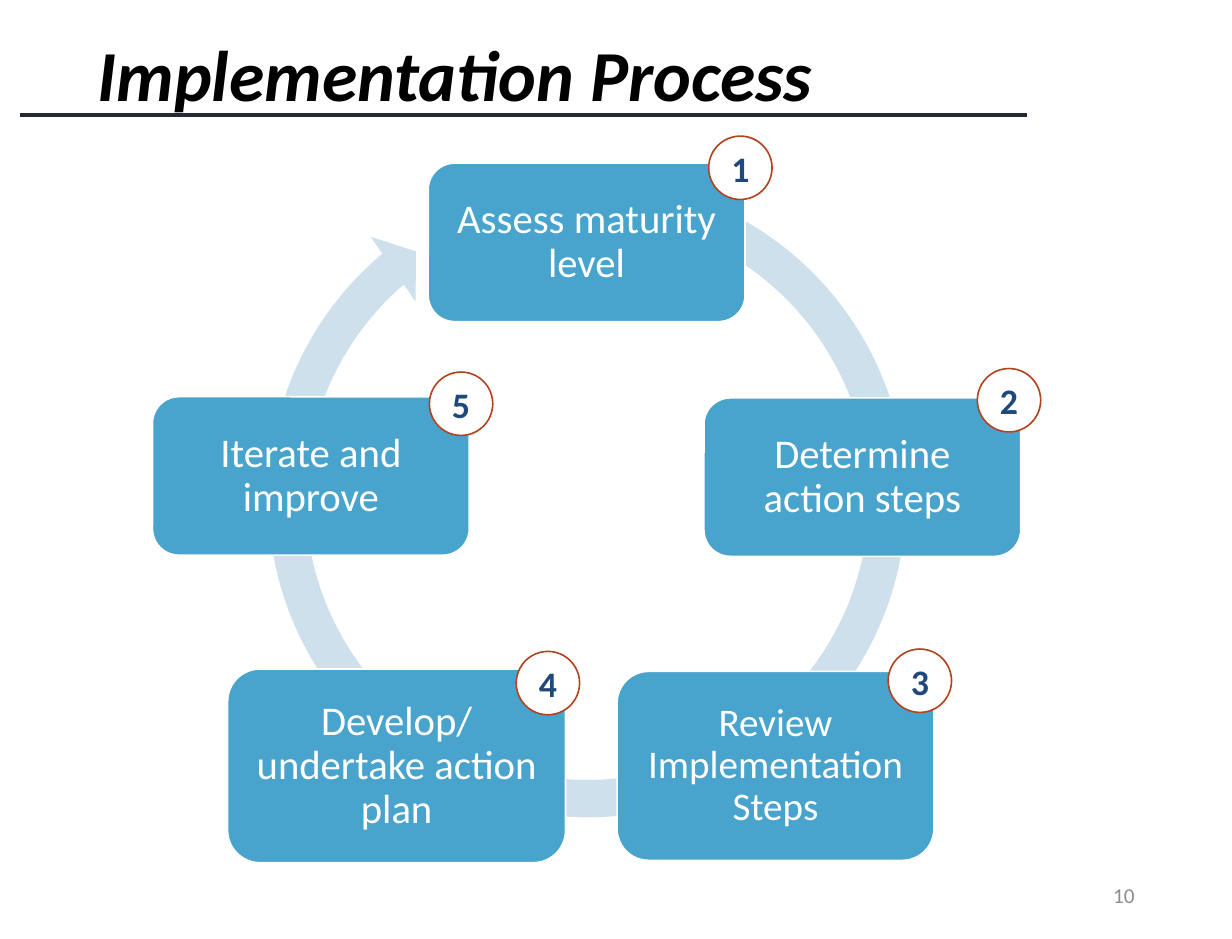
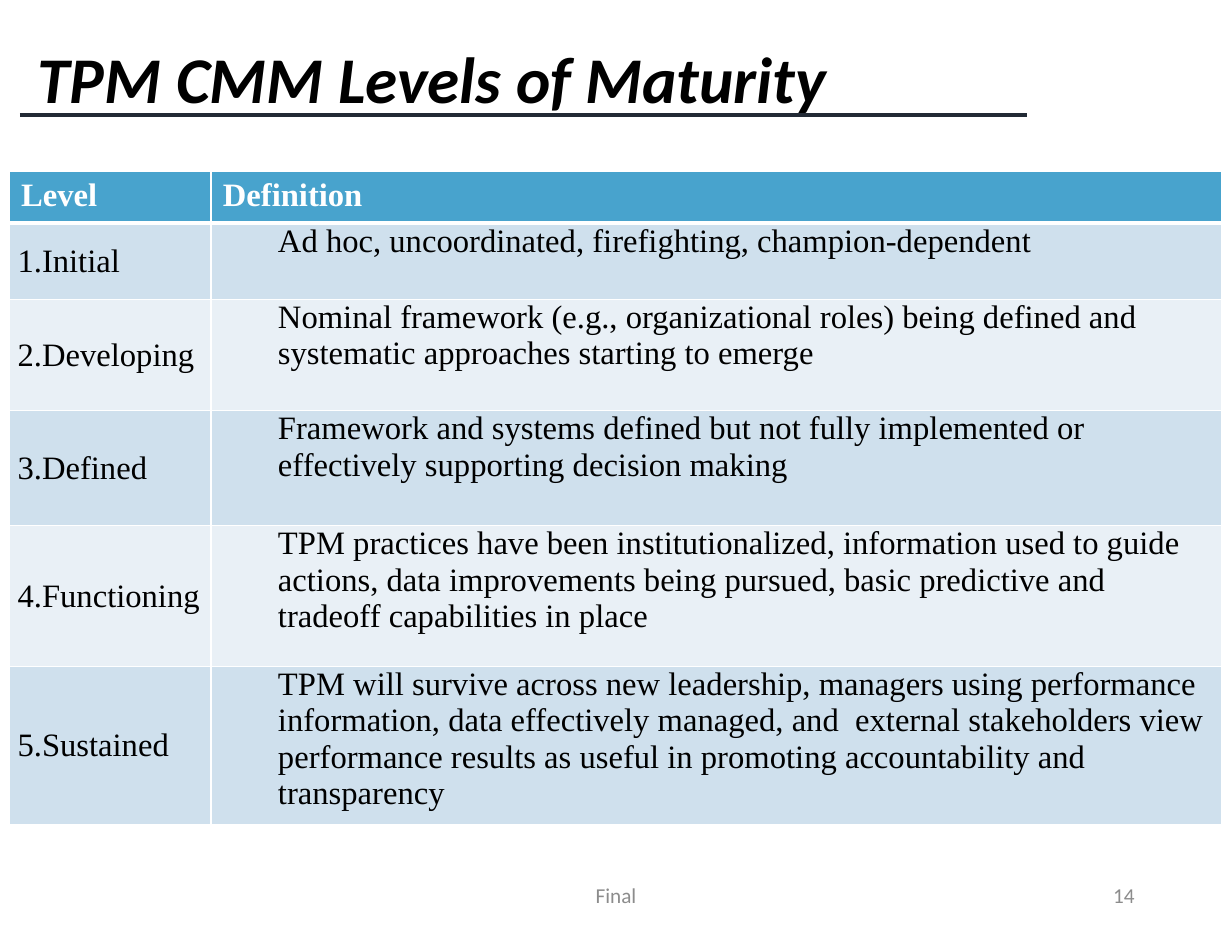
"""Build two slides: the implementation cycle and the table of maturity levels."""
from pptx import Presentation
from pptx.dml.color import RGBColor
from pptx.enum.shapes import MSO_CONNECTOR, MSO_SHAPE
from pptx.enum.text import MSO_ANCHOR, MSO_AUTO_SIZE, PP_ALIGN
from pptx.oxml import parse_xml
from pptx.oxml.ns import nsdecls
from pptx.util import Emu, Pt

PX = 9144
COLORS = {
    "black": "000000", "white": "FFFFFF", "rule": "222A35", "muted": "8C8C8C",
    "blue": "48A3CD", "band": "CFE0ED", "pale": "E9F0F6", "navy": "1F497D", "rust": "B2431E",
}
STEPS = [
    ("Assess maturity level", (365, 139, 270, 135), 25, (604, 116)),
    ("Determine action steps", (600, 339, 270, 135), 25, (833, 314)),
    ("Review Implementation Steps", (526, 572, 270, 161), 24, (757, 553)),
    ("Develop/ undertake action plan", (194, 570, 288, 165), 25, (440, 555)),
    ("Iterate and improve", (130, 338, 270, 135), 25, (366, 317)),
]
BADGE_SIZE = 54
LEVELS = [
    ("Level", "Definition"),
    ("1.Initial", "Ad hoc, uncoordinated, firefighting, champion-dependent"),
    ("2.Developing", "Nominal framework (e.g., organizational roles) being defined and "
     "systematic approaches starting to emerge"),
    ("3.Defined", "Framework and systems defined but not fully implemented or "
     "effectively supporting decision making"),
    ("4.Functioning", "TPM practices have been institutionalized, information used to guide "
     "actions, data improvements being pursued, basic predictive and tradeoff capabilities in place"),
    ("5.Sustained", "TPM will survive across new leadership, managers using performance "
     "information, data effectively managed, and  external stakeholders view performance results "
     "as useful in promoting accountability and transparency"),
]
COLUMN_WIDTHS = (172, 861)
ROW_HEIGHTS = (44, 65, 95, 98, 120, 135)


def px(*lengths):
    return [Emu(length * PX) for length in lengths]


def color(name):
    return RGBColor.from_string(COLORS[name])


class SlideMaker:
    def __init__(self, deck):
        self.deck = deck
        self.page = None

    def new_page(self, title, place, size, number):
        self.page = self.deck.slides.add_slide(self.deck.slide_layouts[5])
        self.rule(17, 98, 875, 98)
        box = self.page.shapes.title
        box.left, box.top, box.width, box.height = px(*place)
        self.set_text(box.text_frame, title, size, "black", PP_ALIGN.LEFT, MSO_ANCHOR.TOP,
                      (11, 5), bold=True, italic=True, spacing=0.9)
        self.footer(number, (742, 741, 236, 43), PP_ALIGN.RIGHT)

    def set_text(self, frame, text, size, ink, align, anchor, margins,
                 font="Calibri", bold=False, italic=False, spacing=None):
        frame.text = text
        frame.word_wrap = True
        frame.auto_size = MSO_AUTO_SIZE.NONE
        frame.vertical_anchor = anchor
        frame.margin_left, frame.margin_top = px(*margins)
        frame.margin_right, frame.margin_bottom = px(*margins)
        self.style(frame.paragraphs[0], size, ink, align, font, bold, italic, spacing)

    def style(self, para, size, ink, align, font, bold, italic=False, spacing=None):
        para.alignment = align
        para.line_spacing = spacing
        for span in para.runs:
            span.font.name = font
            span.font.size = Pt(size)
            span.font.bold = bold
            span.font.italic = italic
            span.font.color.rgb = color(ink)

    def rule(self, *ends):
        line = self.page.shapes.add_connector(MSO_CONNECTOR.STRAIGHT, *px(*ends))
        line.line.color.rgb = color("rule")
        line.line.width = Pt(2)
        line._element.spPr.append(parse_xml(f"<a:effectLst {nsdecls('a')}/>"))

    def footer(self, text, place, align):
        box = self.page.shapes.add_textbox(*px(*place))
        self.set_text(box.text_frame, text, 13, "muted", align, MSO_ANCHOR.MIDDLE, (11, 5))

    def shape(self, kind, place, fill, outline=None):
        box = self.page.shapes.add_shape(kind, *px(*place))
        box.shadow.inherit = False
        box.fill.solid()
        box.fill.fore_color.rgb = color(fill)
        if outline:
            box.line.color.rgb = color(outline)
            box.line.width = Pt(1)
        else:
            box.line.fill.background()
        return box

    def cycle_arrow(self, place, thickness, head_angle, end_angle, start_angle, head_width):
        arrow = self.shape(MSO_SHAPE.CIRCULAR_ARROW, place, "band")
        angles = [degrees * 0.6 for degrees in (head_angle, end_angle, start_angle)]
        for index, value in enumerate([thickness / 100, *angles, head_width / 100]):
            arrow.adjustments[index] = value

    def step(self, text, place, size):
        box = self.shape(MSO_SHAPE.ROUNDED_RECTANGLE, place, "blue", "white")
        self.set_text(box.text_frame, text, size, "white", PP_ALIGN.CENTER, MSO_ANCHOR.MIDDLE,
                      (10, 10), spacing=0.9)

    def badge(self, text, corner):
        box = self.shape(MSO_SHAPE.OVAL, (*corner, BADGE_SIZE, BADGE_SIZE), "white", "rust")
        self.set_text(box.text_frame, text, 22, "navy", PP_ALIGN.CENTER, MSO_ANCHOR.MIDDLE,
                      (0, 0), bold=True)

    def table(self, left, top, widths, heights, rows):
        frame = self.page.shapes.add_table(
            len(rows), len(widths), *px(left, top, sum(widths), sum(heights)))
        grid = frame.table
        for column, width in zip(grid.columns, px(*widths)):
            column.width = width
        for row, height in zip(grid.rows, px(*heights)):
            row.height = height
        for row_index, texts in enumerate(rows):
            for column_index, text in enumerate(texts):
                self.cell(grid.cell(row_index, column_index), text, row_index, column_index)

    def cell(self, cell, text, row_index, column_index):
        header = row_index == 0
        cell.text = text
        centred = not header and column_index == 0
        cell.vertical_anchor = MSO_ANCHOR.MIDDLE if centred else MSO_ANCHOR.TOP
        side, edge = px(*((10, 5) if header else (7, 0)))
        cell.margin_left = cell.margin_right = side
        cell.margin_top = cell.margin_bottom = edge
        para = cell.text_frame.paragraphs[0]
        if not header and column_index == 1:
            para.level = 1
            properties = para._p.get_or_add_pPr()
            properties.set("marL", str(50 * PX))
            properties.set("indent", "0")
        self.style(para, 20, "white" if header else "black", PP_ALIGN.LEFT,
                   "Times New Roman", header)
        self.borders(cell, {"L": 1, "R": 1, "T": 3 if row_index == 1 else 1,
                            "B": 3 if header else 1})
        cell.fill.solid()
        band = "band" if row_index % 2 else "pale"
        cell.fill.fore_color.rgb = color("blue" if header else band)

    def borders(self, cell, widths):
        properties = cell._tc.get_or_add_tcPr()
        for side, points in widths.items():
            properties.append(parse_xml(
                f'<a:ln{side} {nsdecls("a")} w="{Pt(points)}"><a:solidFill>'
                f'<a:srgbClr val="{COLORS["white"]}"/></a:solidFill></a:ln{side}>'))


def main():
    deck = Presentation()
    deck.slide_width, deck.slide_height = px(1050, 800)
    maker = SlideMaker(deck)

    maker.new_page("Implementation Process", (72, 29, 906, 62), 44, "10")
    maker.cycle_arrow((211, 135, 579, 579), 5.5, 5.51, 229.73, 289.69, 5.8)
    for text, place, size, _ in STEPS:
        maker.step(text, place, size)
    for number, (_, _, _, corner) in enumerate(STEPS, 1):
        maker.badge(str(number), corner)

    maker.new_page("TPM CMM Levels of Maturity", (21, 35, 906, 132), 40, "14")
    maker.table(8, 146, COLUMN_WIDTHS, ROW_HEIGHTS, LEVELS)
    maker.footer("Final", (348, 741, 354, 43), PP_ALIGN.CENTER)

    deck.save("out.pptx")


if __name__ == "__main__":
    main()
